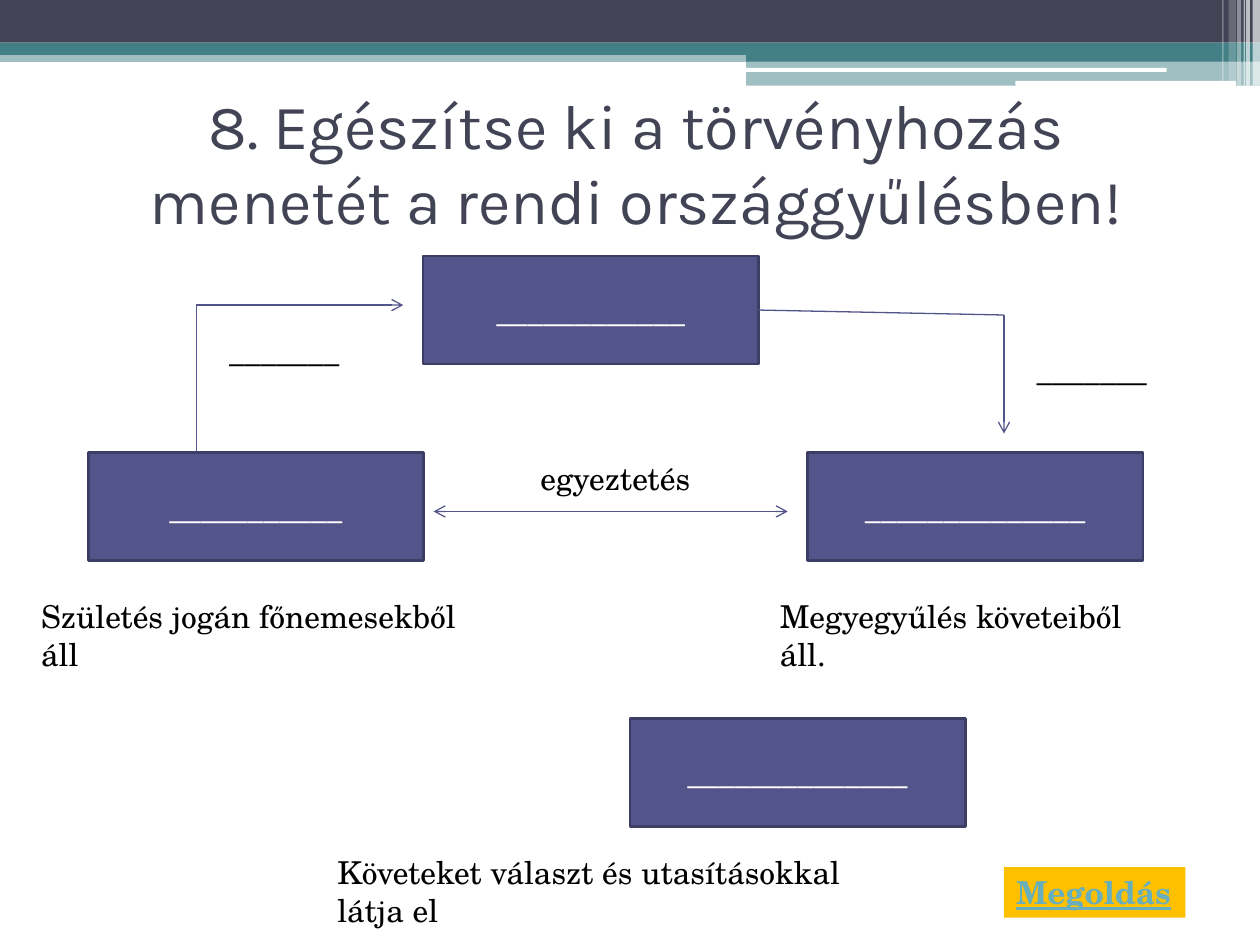
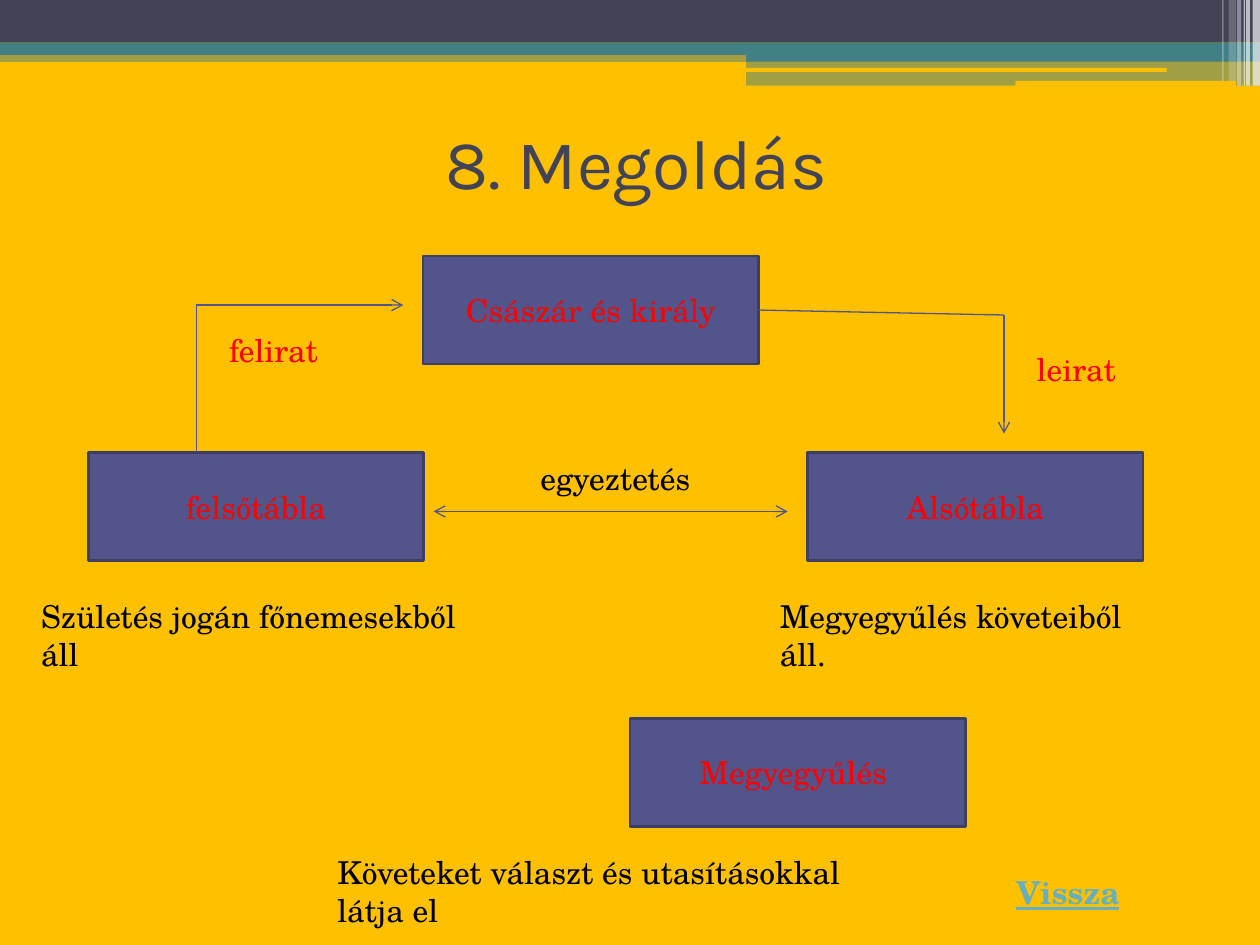
from dataclasses import dataclass
from typing import NamedTuple

from lxml import etree
from pptx import Presentation
from pptx import util as u
from pptx.dml.color import RGBColor
from pptx.enum import shapes, text
from pptx.oxml.ns import qn

Cm, Pt = u.Cm, u.Pt


@dataclass(frozen=True)
class Theme:
    white: str = "FFFFFF"
    black: str = "000000"
    slate: str = "424456"
    teal: str = "438086"
    gold: str = "FFC000"
    indigo: str = "53548A"
    indigo_edge: str = "3D3E66"
    answer: str = "FF0000"
    link: str = "67AFBD"
    title_font: str = "Karla"
    body_font: str = "TeX Gyre Schola"
    body_size: int = 18
    box_edge: float = 1.5
    arrow_width: float = 0.75


THEME = Theme()


class Area(NamedTuple):
    left: float
    top: float
    width: float
    height: float


class Band(NamedTuple):
    area: Area
    color: str
    opacity: int = 100
    rounded: bool = False


class Style(NamedTuple):
    color: str = THEME.black
    size: int = THEME.body_size
    font: str = THEME.body_font
    centred: bool = False
    linked: bool = False


class Arrow(NamedTuple):
    start: tuple[float, float]
    end: tuple[float, float]
    head: bool = False
    tail: bool = False


@dataclass(frozen=True)
class Sheet:
    """What differs between the exercise and its solution."""
    title: str
    title_size: int
    background: str
    box_texts: tuple[str, ...]
    box_color: str
    label_texts: tuple[str, ...]
    label_color: str
    link_text: str
    link_width: float
    link_fill: str | None = None


PAGE_WIDTH, PAGE_HEIGHT = 25.4, 19.05
LINE_HEIGHT = 1.02
TITLE_AREA = Area(1.4, 1.78, 22.86, 2.97)
LINK_LEFT, LINK_TOP = 20.24, 17.48

BANDS = (
    Band(Area(0, 1.02, PAGE_WIDTH, 0.23), THEME.teal, 50),
    Band(Area(0, 0, PAGE_WIDTH, 0.86), THEME.slate),
    Band(Area(0, 0.86, PAGE_WIDTH, 0.25), THEME.teal),
    Band(Area(15.04, 0.99, 10.36, 0.25), THEME.teal),
    Band(Area(15.04, 1.22, 10.36, 0.51), THEME.teal, 50),
)
CUTOUTS = (Area(15.01, 1.37, 8.51, 0.08), Area(20.47, 1.63, 4.45, 0.1))
STRIPES = (
    Band(Area(25.25, 0, 0.15, 1.73), THEME.white, 65),
    Band(Area(25.12, 0, 0.08, 1.73), THEME.white, 65),
    Band(Area(25.07, 0, 0.03, 1.73), THEME.white, 60),
    Band(Area(24.94, 0, 0.08, 1.73), THEME.white, 40),
    Band(Area(24.77, 0, 0.15, 1.63), THEME.white, 20),
    Band(Area(24.64, 0, 0.03, 1.63), THEME.white, 30),
)

# King, upper house, lower house, county assembly
BOX_AREAS = tuple(Area(left, top, 6.76, 2.18) for left, top in (
    (8.53, 5.16), (1.78, 9.12), (16.28, 9.12), (12.7, 14.48)))
LABEL_AREAS = tuple(Area(left, top, 3.76, LINE_HEIGHT) for left, top in (
    (4.37, 6.55), (20.65, 6.93)))
CAPTIONS = (
    (Area(6.55, 17.07, 12.12, LINE_HEIGHT),
     "Követeket választ és utasításokkal látja el", Style()),
    (Area(0.58, 11.91, 9.53, LINE_HEIGHT),
     "Születés jogán főnemesekből áll", Style()),
    (Area(15.47, 11.91, 8.33, LINE_HEIGHT),
     "Megyegyűlés követeiből áll.", Style()),
    (Area(8.94, 9.12, 6.93, LINE_HEIGHT), "egyeztetés", Style(centred=True)),
)
UP_CORNER, DOWN_CORNER = (3.96, 6.15), (20.24, 6.35)
ARROWS = (
    Arrow((3.96, 9.12), UP_CORNER),
    Arrow(UP_CORNER, (8.13, 6.15), tail=True),
    Arrow((15.29, 6.25), DOWN_CORNER),
    Arrow(DOWN_CORNER, (20.24, 8.74), tail=True),
    Arrow((8.74, 10.31), (15.88, 10.31), head=True, tail=True),
)

SHEETS = (
    Sheet("8. Egészítse ki a törvényhozás menetét a rendi országgyűlésben!",
          36, THEME.white,
          ("_" * 12, "_" * 11, "_" * 14, "_" * 14), THEME.white,
          ("_" * 7, "_" * 7), THEME.black,
          "Megoldás", 3.66, THEME.gold),
    Sheet("8. Megoldás", 40, THEME.gold,
          ("Császár és király", "felsőtábla", "Alsótábla", "Megyegyűlés "),
          THEME.answer,
          ("felirat", "leirat"), THEME.answer,
          "Vissza", 2.62),
)


def rgb(color: str) -> RGBColor:
    return RGBColor.from_string(color)


def paint(fill, color: str) -> None:
    fill.solid()
    fill.fore_color.rgb = rgb(color)


def place(area: Area) -> list[u.Length]:
    return [Cm(length) for length in area]


def draw_band(page, band: Band) -> None:
    kind = shapes.MSO_SHAPE.ROUNDED_RECTANGLE if band.rounded else shapes.MSO_SHAPE.RECTANGLE
    box = page.shapes.add_shape(kind, *place(band.area))
    box.shadow.inherit = False
    box.line.fill.background()
    paint(box.fill, band.color)
    if band.opacity < 100:
        color = box.fill._xPr.find(qn("a:solidFill"))[0]
        etree.SubElement(color, qn("a:alpha"), val=str(band.opacity * 1000))


def write(box, words: str, style: Style) -> None:
    para = box.text_frame.paragraphs[0]
    para.alignment = text.PP_ALIGN.CENTER if style.centred else text.PP_ALIGN.LEFT
    span = para.add_run()
    span.text = words
    span.font.name = style.font
    span.font.size = Pt(style.size)
    span.font.color.rgb = rgb(style.color)
    if style.linked:
        span.font.bold = span.font.underline = True


def draw_text(page, area: Area, words: str, style: Style):
    box = page.shapes.add_textbox(*place(area))
    box.text_frame.word_wrap = not style.linked
    box.text_frame.auto_size = text.MSO_AUTO_SIZE.SHAPE_TO_FIT_TEXT
    write(box, words, style)
    return box


def draw_title(page, sheet: Sheet) -> None:
    box = page.shapes.add_textbox(*place(TITLE_AREA))
    box.text_frame.word_wrap = True
    box.text_frame.vertical_anchor = text.MSO_ANCHOR.MIDDLE
    write(box, sheet.title,
          Style(THEME.slate, sheet.title_size, THEME.title_font, centred=True))


def draw_box(page, area: Area, words: str, color: str) -> None:
    box = page.shapes.add_shape(shapes.MSO_SHAPE.RECTANGLE, *place(area))
    box.shadow.inherit = False
    paint(box.fill, THEME.indigo)
    box.line.color.rgb = rgb(THEME.indigo_edge)
    box.line.width = Pt(THEME.box_edge)
    box.text_frame.word_wrap = True
    box.text_frame.vertical_anchor = text.MSO_ANCHOR.MIDDLE
    write(box, words, Style(color, centred=True))


def draw_arrow(page, arrow: Arrow) -> None:
    ends = [Cm(length) for length in (*arrow.start, *arrow.end)]
    connector = page.shapes.add_connector(shapes.MSO_CONNECTOR.STRAIGHT, *ends)
    connector.line.color.rgb = rgb(THEME.indigo)
    connector.line.width = Pt(THEME.arrow_width)
    line = connector.line._get_or_add_ln()
    for tag, wanted in (("a:headEnd", arrow.head), ("a:tailEnd", arrow.tail)):
        if wanted:
            etree.SubElement(line, qn(tag), type="arrow")
    etree.SubElement(connector._element.spPr, qn("a:effectLst"))


def draw_link(page, sheet: Sheet) -> None:
    area = Area(LINK_LEFT, LINK_TOP, sheet.link_width, LINE_HEIGHT)
    box = draw_text(page, area, sheet.link_text, Style(THEME.link, linked=True))
    if sheet.link_fill:
        paint(box.fill, sheet.link_fill)


def draw_header(page, background: str) -> None:
    """Bands, cutouts in the page colour and the stripes at the right edge."""
    cutouts = tuple(Band(area, background, rounded=True) for area in CUTOUTS)
    for band in BANDS + cutouts + STRIPES:
        draw_band(page, band)


def draw_sheet(deck, sheet: Sheet) -> None:
    page = deck.slides.add_slide(deck.slide_layouts[6])
    paint(page.background.fill, sheet.background)
    draw_header(page, sheet.background)
    draw_title(page, sheet)
    draw_link(page, sheet)
    for area, words in zip(BOX_AREAS, sheet.box_texts):
        draw_box(page, area, words, sheet.box_color)
    for arrow in ARROWS:
        draw_arrow(page, arrow)
    for area, words, style in CAPTIONS:
        draw_text(page, area, words, style)
    for area, words in zip(LABEL_AREAS, sheet.label_texts):
        draw_text(page, area, words, Style(sheet.label_color))


def main() -> None:
    deck = Presentation()
    deck.slide_width, deck.slide_height = Cm(PAGE_WIDTH), Cm(PAGE_HEIGHT)
    for sheet in SHEETS:
        draw_sheet(deck, sheet)
    deck.save("out.pptx")


if __name__ == "__main__":
    main()
